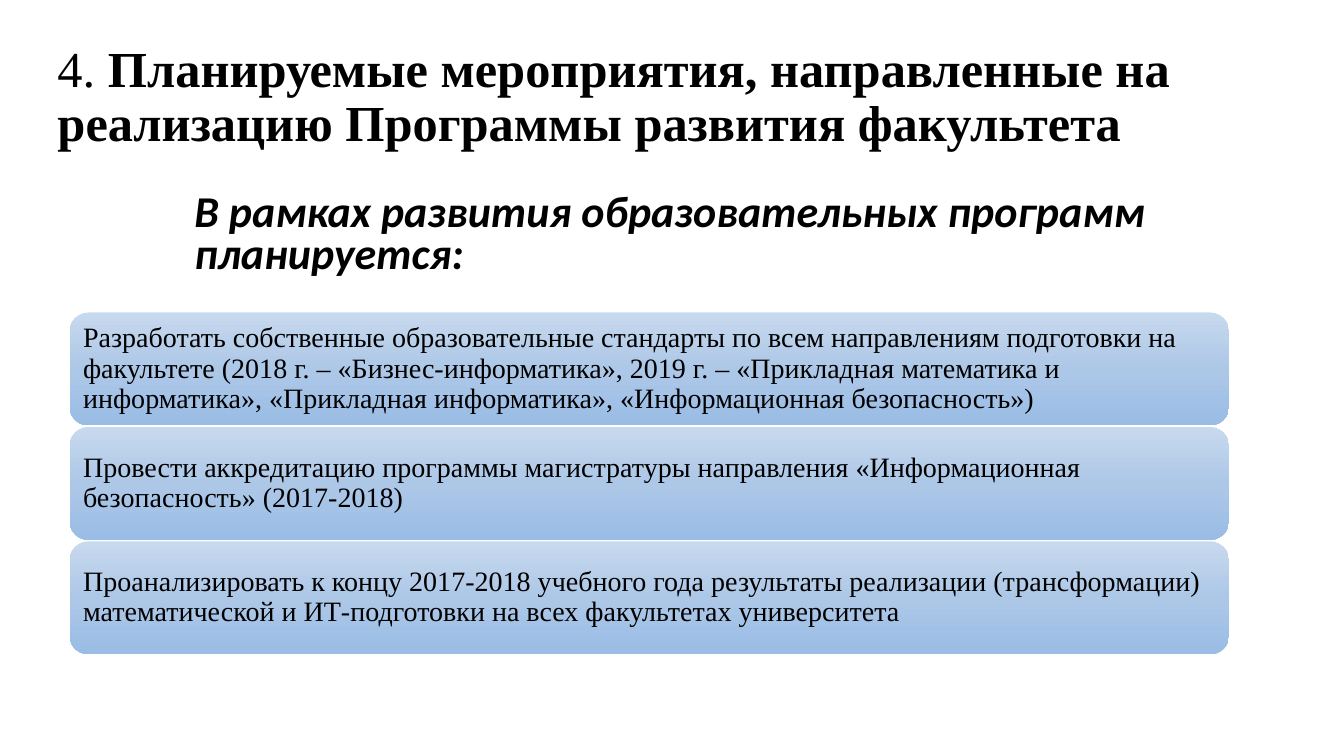
"""Build the slide on planned measures for the faculty development programme."""
import copy
from dataclasses import dataclass

import pptx
import pptx.dml.color
import pptx.enum.shapes
import pptx.enum.text
import pptx.oxml.ns
import pptx.shapes.autoshape
import pptx.slide
import pptx.text.text
import pptx.util

Inches = pptx.util.Inches
SERIF = "Times New Roman"
GRADIENT = ((0, "C7D9EE"), (0.5, "ADC7E7"), (1, "9ABDE5"))
CARD_LEFT, CARD_TOP, CARD_WIDTH, CARD_HEIGHT = 0.69, 3.1, 11.5, 1.12
CARD_PITCH = 1.135


@dataclass
class Measure:
    """A planned measure shown on one card."""
    text: str


MEASURES = [
    Measure("Разработать собственные образовательные стандарты по всем направлениям "
            "подготовки на факультете (2018 г. – «Бизнес-информатика», 2019 г. – "
            "«Прикладная математика и информатика», «Прикладная информатика», "
            "«Информационная безопасность»)"),
    Measure("Провести аккредитацию программы магистратуры направления "
            "«Информационная безопасность» (2017-2018)"),
    Measure("Проанализировать к концу 2017-2018 учебного года результаты реализации "
            "(трансформации) математической и ИТ-подготовки на всех факультетах "
            "университета"),
]


def rgb(value: str) -> pptx.dml.color.RGBColor:
    """Turn a hex string into a colour."""
    return pptx.dml.color.RGBColor.from_string(value)


def add_text(p: pptx.text.text._Paragraph, text: str, *, size: float, font: str = SERIF,
             bold: bool = False, italic: bool = False, spacing: float = 0.9) -> None:
    """Add a formatted run to a left-aligned paragraph."""
    p.alignment = pptx.enum.text.PP_ALIGN.LEFT
    p.line_spacing = spacing
    r = p.add_run()
    r.text = text
    r.font.name = font
    r.font.size = pptx.util.Pt(size)
    r.font.bold = bold
    r.font.italic = italic
    r.font.color.rgb = rgb("000000")


def fill_gradient(sp: pptx.shapes.autoshape.Shape) -> None:
    """Fill a shape with the card gradient, running downwards."""
    sp.fill.gradient()
    sp.fill.gradient_angle = 270
    stops = sp._element.spPr.find(".//" + pptx.oxml.ns.qn("a:gsLst"))
    stops.insert(1, copy.deepcopy(stops[0]))
    for stop, (position, colour) in zip(sp.fill.gradient_stops, GRADIENT):
        stop.position = position
        stop.color.rgb = rgb(colour)


def add_title(s: pptx.slide.Slide) -> None:
    """Place and fill the title."""
    sp = s.shapes.title
    sp.left, sp.top, sp.width, sp.height = map(Inches, (0.47, 0.32, 11.95, 1.31))
    tf = sp.text_frame
    tf.auto_size = pptx.enum.text.MSO_AUTO_SIZE.NONE
    tf.vertical_anchor = pptx.enum.text.MSO_ANCHOR.MIDDLE
    p = tf.paragraphs[0]
    add_text(p, "4. ", size=36)
    add_text(p, "Планируемые мероприятия, направленные на реализацию "
                "Программы развития факультета", size=36, bold=True)


def add_subtitle(s: pptx.slide.Slide) -> None:
    """Add the line that introduces the cards."""
    sp = s.shapes.add_textbox(*map(Inches, (1.83, 1.87, 11.5, 0.97)))
    tf = sp.text_frame
    tf.word_wrap = True
    p = tf.paragraphs[0]
    p.space_before = pptx.util.Pt(10)
    add_text(p, "В рамках развития образовательных программ планируется:",
             size=31.4, font="Calibri", bold=True, italic=True, spacing=0.8)


def add_card(s: pptx.slide.Slide, measure: Measure, top: float) -> None:
    """Add a rounded card with its measure."""
    sp = s.shapes.add_shape(
        pptx.enum.shapes.MSO_SHAPE.ROUNDED_RECTANGLE,
        *map(Inches, (CARD_LEFT, top, CARD_WIDTH, CARD_HEIGHT)))
    sp.shadow.inherit = False
    sp.line.fill.background()
    fill_gradient(sp)
    tf = sp.text_frame
    tf.word_wrap = True
    tf.vertical_anchor = pptx.enum.text.MSO_ANCHOR.MIDDLE
    tf.margin_left = tf.margin_right = tf.margin_top = tf.margin_bottom = Inches(0.08)
    add_text(tf.paragraphs[0], measure.text, size=20)


def main() -> None:
    """Build and save the presentation."""
    prs = pptx.Presentation()
    prs.slide_width, prs.slide_height = Inches(13.33), Inches(7.5)
    s = prs.slides.add_slide(prs.slide_layouts.get_by_name("Title Only"))
    add_title(s)
    for i, measure in enumerate(MEASURES):
        add_card(s, measure, CARD_TOP + i * CARD_PITCH)
    add_subtitle(s)
    prs.save("out.pptx")


if __name__ == "__main__":
    main()
